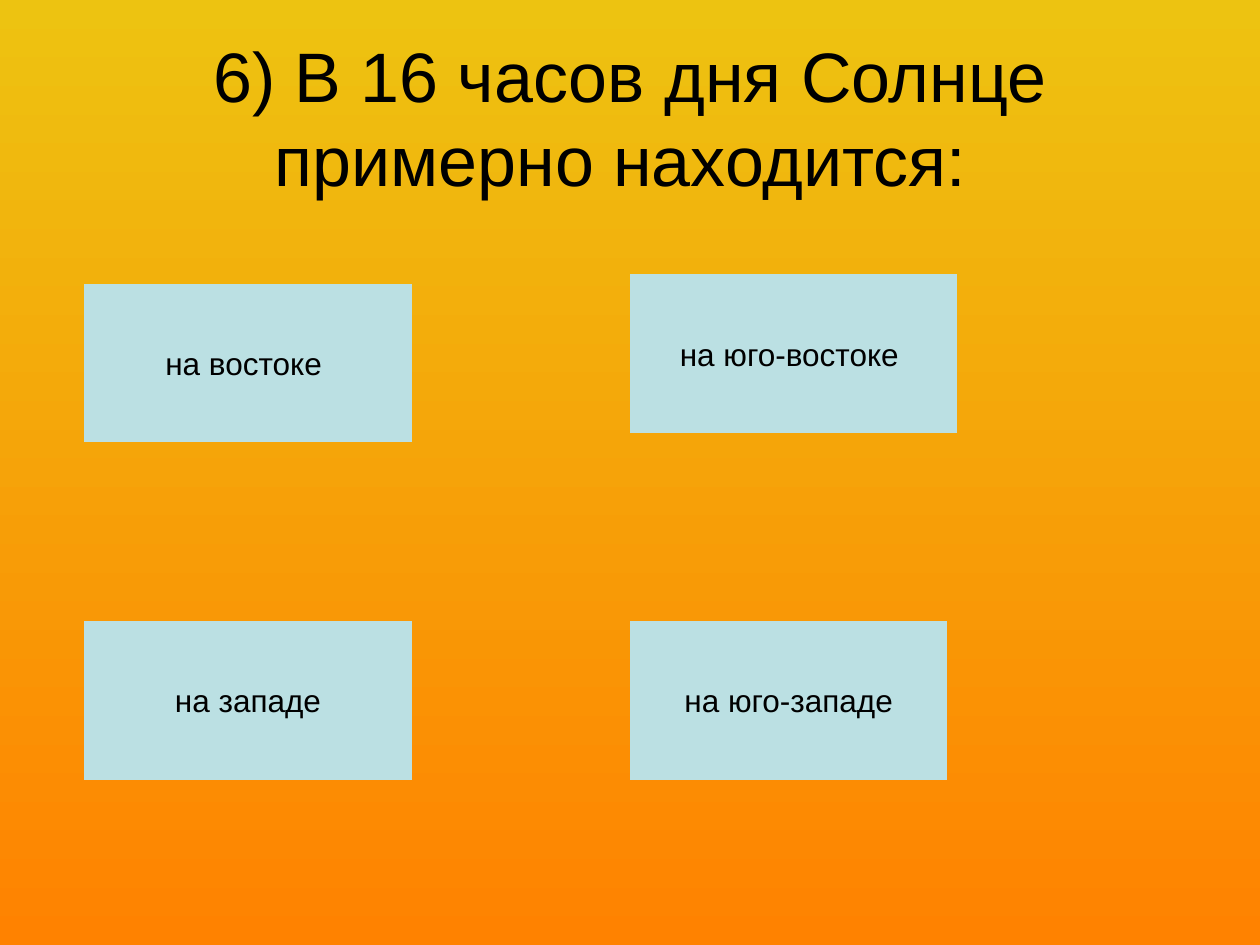
from pptx import Presentation
from pptx.dml.color import RGBColor
from pptx.enum.shapes import MSO_SHAPE
from pptx.enum.text import MSO_ANCHOR, PP_ALIGN
from pptx.util import Cm, Pt

LEFT_COLUMN, RIGHT_COLUMN = 1.7, 12.7
BOTTOM_ROW = 12.52
ANSWER_WIDTH, ANSWER_HEIGHT = 6.6, 3.2

ANSWERS = [
    ("на востоке ", LEFT_COLUMN, 5.72, ANSWER_WIDTH),
    ("на юго-востоке ", RIGHT_COLUMN, 5.53, ANSWER_WIDTH),
    ("на западе", LEFT_COLUMN, BOTTOM_ROW, ANSWER_WIDTH),
    ("на юго-западе", RIGHT_COLUMN, BOTTOM_ROW, 6.4),
]


def color(hex_value):
    return RGBColor.from_string(hex_value)


def paint_background(slide, top_color, bottom_color):
    fill = slide.background.fill
    fill.gradient()
    fill.gradient_angle = 270
    for stop, position, shade in zip(fill.gradient_stops, (0, 1), (top_color, bottom_color)):
        stop.position = position
        stop.color.rgb = color(shade)


def write_text(frame, text, size):
    frame.vertical_anchor = MSO_ANCHOR.MIDDLE
    paragraph = frame.paragraphs[0]
    paragraph.text = text
    paragraph.alignment = PP_ALIGN.CENTER
    paragraph.font.name = "Arial"
    paragraph.font.size = Pt(size)
    paragraph.font.color.rgb = color("000000")


def set_question(slide, text):
    question = slide.shapes.title
    question.left, question.top = Cm(1.27), Cm(0.76)
    question.width, question.height = Cm(22.86), Cm(3.18)
    write_text(question.text_frame, text, 40)


def add_answer(slide, text, left, top, width):
    answer = slide.shapes.add_shape(
        MSO_SHAPE.ACTION_BUTTON_CUSTOM, Cm(left), Cm(top), Cm(width), Cm(ANSWER_HEIGHT)
    )
    answer.shadow.inherit = False
    answer.fill.solid()
    answer.fill.fore_color.rgb = color("BBE0E3")
    answer.line.fill.background()
    answer.text_frame.word_wrap = False
    write_text(answer.text_frame, text, 18)


def main():
    presentation = Presentation()
    presentation.slide_width, presentation.slide_height = Cm(25.4), Cm(19.05)
    slide = presentation.slides.add_slide(presentation.slide_layouts[5])
    paint_background(slide, "EDC311", "FF8200")
    set_question(slide, "6) В 16 часов дня Солнце примерно находится: ")
    for answer in ANSWERS:
        add_answer(slide, *answer)
    presentation.save("out.pptx")


if __name__ == "__main__":
    main()
